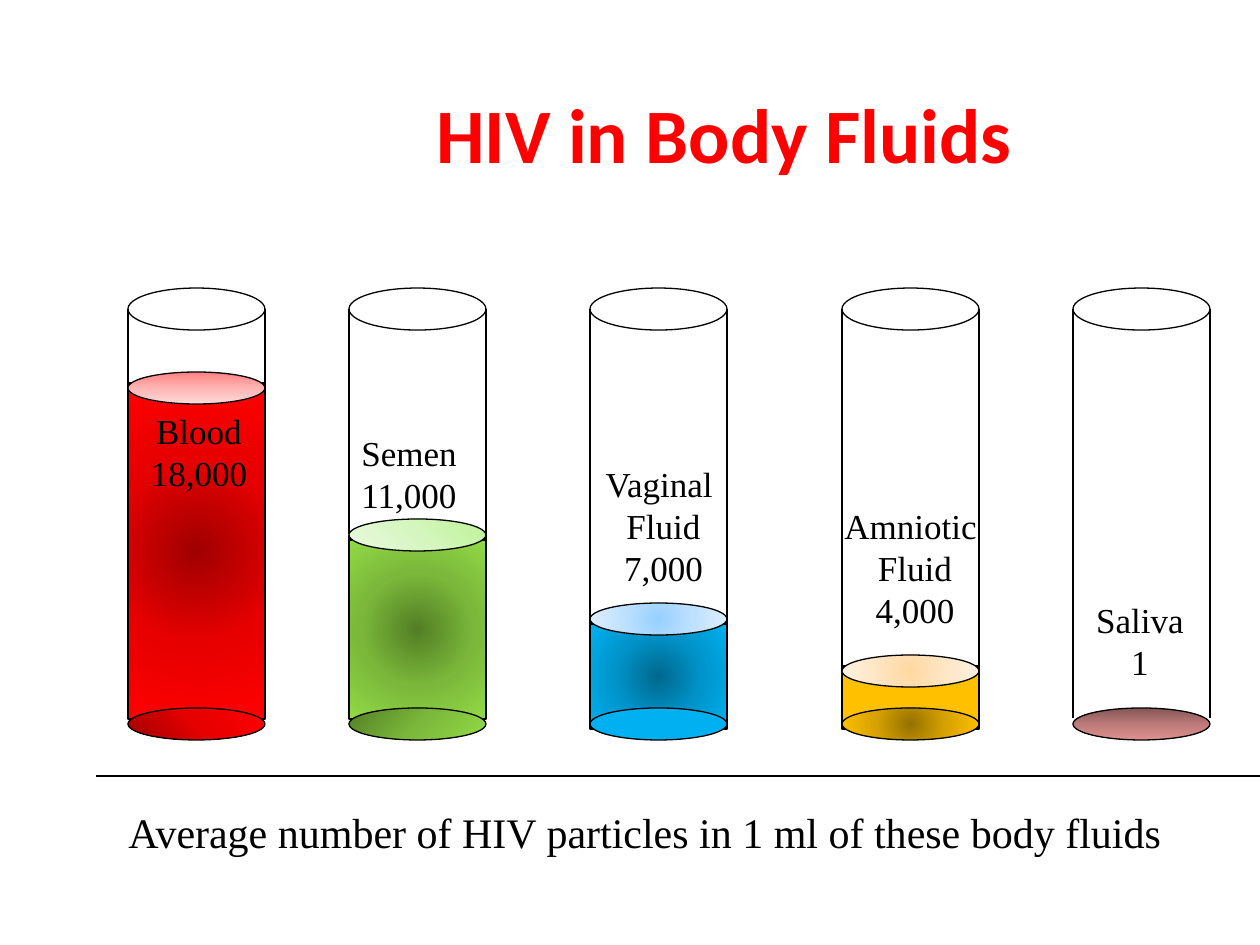
from dataclasses import dataclass
from typing import Any

from lxml import etree
from pptx import Presentation
from pptx.dml.color import RGBColor
from pptx.enum.shapes import MSO_CONNECTOR, MSO_SHAPE
from pptx.enum.text import MSO_ANCHOR, MSO_AUTO_SIZE, PP_ALIGN
from pptx.oxml.ns import qn
from pptx.util import Pt

OVAL, RECTANGLE = MSO_SHAPE.OVAL, MSO_SHAPE.RECTANGLE
STRAIGHT = MSO_CONNECTOR.STRAIGHT
LEFT, CENTER = PP_ALIGN.LEFT, PP_ALIGN.CENTER
MIDDLE, GROW = MSO_ANCHOR.MIDDLE, MSO_AUTO_SIZE.SHAPE_TO_FIT_TEXT
ROUND = "circle"  # gradient that spreads from the centre


@dataclass(frozen=True)
class Theme:
    title_font: str = "Calibri"
    body_font: str = "Times New Roman"
    title_size: int = 44
    caption_size: int = 24
    label_size: int = 20
    title_color: str = "FF0000"
    ink: str = "000000"
    line_width: float = 0.75


@dataclass(frozen=True)
class Tube:
    left: int
    base: tuple          # colours and direction of the bottom ellipse
    label: tuple         # text lines
    label_at: tuple      # left, top, width, relative to the tube
    liquid: tuple = ()   # colours and direction of the liquid
    surface: tuple = ()  # colours and direction of the liquid's top
    level: int = 0       # top of the surface, relative to the tube
    body: tuple = ()     # top and bottom of the liquid, relative to the tube
    align: Any = CENTER
    wrap: bool = False


THEME = Theme()
TUBE_TOP, TUBE_WIDTH, TUBE_HEIGHT = 288, 137, 452
CAP_HEIGHT, DISC_HEIGHT = 42, 32
LINE_HEIGHT, TEXT_MARGINS = 42, 13

RED = ("A00000", "E60000", "FF0000")
GREEN = ("537E25", "7AB73A", "92DA46")
TUBES = (
    Tube(128, (RED, 315), ("Blood", "18,000"), (3, 115, 136),
         (RED, ROUND), (("FF8080", "FFB3B3", "FFDADA"), 90), 84, (95, 431)),
    Tube(349, (GREEN, 45), ("Semen", "11,000"), (0, 137, 141),
         (GREEN, ROUND), (("BEF397", "D5F6C0", "EAFAE0"), 135), 231, (252, 431),
         align=LEFT, wrap=True),
    Tube(590, (("00B0F0",), None), ("Vaginal ", "Fluid", "7,000"), (0, 168, 147),
         (("00688E", "0094CA", "00B0F0"), ROUND),
         (("96D0FF", "BFE1FF", "E0EFFF"), ROUND), 315, (336, 441), wrap=True),
    Tube(842, (("977200", "D7A200", "FFC000"), ROUND),
         ("Amniotic ", "Fluid", "4,000"), (-22, 210, 190),
         (("FFC000",), None), (("FFD8A0", "FFE6C5", "FFF2E3"), ROUND), 367, (378, 441)),
    Tube(1073, (("845655", "BB7A79", "DE918F"), 90), ("Saliva", "1"), (0, 304, 134)),
)


def px(length):
    return round(length * 914400 / 126)


def place(*lengths):
    return [px(length) for length in lengths]


def apply(target, values):
    for name, value in values.items():
        setattr(target, name, value)


def style_line(line):
    line.color.rgb = RGBColor.from_string(THEME.ink)
    line.width = Pt(THEME.line_width)


def paint(shape, colors, direction):
    """Fill with one colour, or with evenly spaced gradient stops."""
    if len(colors) == 1:
        shape.fill.solid()
        shape.fill.fore_color.rgb = RGBColor.from_string(colors[0])
        return
    shape.fill.gradient()
    gradient = shape.element.spPr.find(qn("a:gradFill"))
    for child in list(gradient):
        gradient.remove(child)
    stops = etree.SubElement(gradient, qn("a:gsLst"))
    for index, color in enumerate(colors):
        position = index * 100000 // (len(colors) - 1)
        stop = etree.SubElement(stops, qn("a:gs"), pos=str(position))
        etree.SubElement(stop, qn("a:srgbClr"), val=color)
    if direction == ROUND:
        spread = etree.SubElement(gradient, qn("a:path"), {"path": ROUND})
        sides = dict.fromkeys("ltrb", "50000")
        etree.SubElement(spread, qn("a:fillToRect"), sides)
    else:
        etree.SubElement(gradient, qn("a:lin"), ang=str(direction * 60000), scaled="0")


def add_part(page, kind, box, fill=None):
    part = page.shapes.add_shape(kind, *place(*box))
    part.shadow.inherit = False
    style_line(part.line)
    if fill:
        paint(part, *fill)
    else:
        part.fill.background()


def add_line(page, *ends):
    line = page.shapes.add_connector(STRAIGHT, *place(*ends))
    style_line(line.line)
    etree.SubElement(line.element.spPr, qn("a:effectLst"))


def write(frame, lines, font, size, color, align, bold=False):
    for index, text in enumerate(lines):
        para = frame.paragraphs[0] if index == 0 else frame.add_paragraph()
        para.alignment = align
        span = para.add_run()
        span.text = text
        apply(span.font, {"name": font, "size": Pt(size), "bold": bold})
        span.font.color.rgb = RGBColor.from_string(color)


def add_text(page, box, lines, size, align, wrap):
    frame = page.shapes.add_textbox(*place(*box)).text_frame
    apply(frame, {"word_wrap": wrap, "auto_size": GROW})
    write(frame, lines, THEME.body_font, size, THEME.ink, align)


def add_title(page, box, text):
    title = page.shapes.title
    apply(title, dict(zip(("left", "top", "width", "height"), place(*box))))
    title.text_frame.vertical_anchor = MIDDLE
    write(title.text_frame, [text], THEME.title_font, THEME.title_size,
          THEME.title_color, CENTER, bold=True)


def add_tube(page, box, tube):
    left, top, width, height = box
    base_top = top + height - DISC_HEIGHT
    # Glass: open top and two walls
    add_part(page, OVAL, (left, top, width, CAP_HEIGHT))
    for wall in (left, left + width):
        add_line(page, wall, top + CAP_HEIGHT // 2, wall, base_top + 10)
    # Liquid with its surface
    if tube.liquid:
        start, end = tube.body
        add_part(page, RECTANGLE, (left, top + start, width, end - start), tube.liquid)
        add_part(page, OVAL, (left, top + tube.level, width, DISC_HEIGHT), tube.surface)
    # Bottom of the tube
    add_part(page, OVAL, (left, base_top, width, DISC_HEIGHT), tube.base)
    # Fluid name and particle count
    label_left, label_top, label_width = tube.label_at
    label_height = TEXT_MARGINS + LINE_HEIGHT * len(tube.label)
    add_text(page, (left + label_left, top + label_top, label_width, label_height),
             tube.label, THEME.label_size, tube.align, tube.wrap)


def add_footer(page, box):
    left, top, width, height = box
    add_line(page, left, top, left + width, top)
    add_text(page, (left + 20, top + 24, 1106, height - 24),
             ["Average number of HIV particles in 1 ml of these body fluids"],
             THEME.caption_size, LEFT, True)


def main():
    deck = Presentation()
    apply(deck, {"slide_width": px(1260), "slide_height": px(945)})
    page = deck.slides.add_slide(deck.slide_layouts.get_by_name("Title Only"))
    add_title(page, (189, 70, 1071, 126), "HIV in Body Fluids")
    for tube in TUBES:
        add_tube(page, (tube.left, TUBE_TOP, TUBE_WIDTH, TUBE_HEIGHT), tube)
    add_footer(page, (96, 776, 1175, 87))
    deck.save("out.pptx")


if __name__ == "__main__":
    main()
